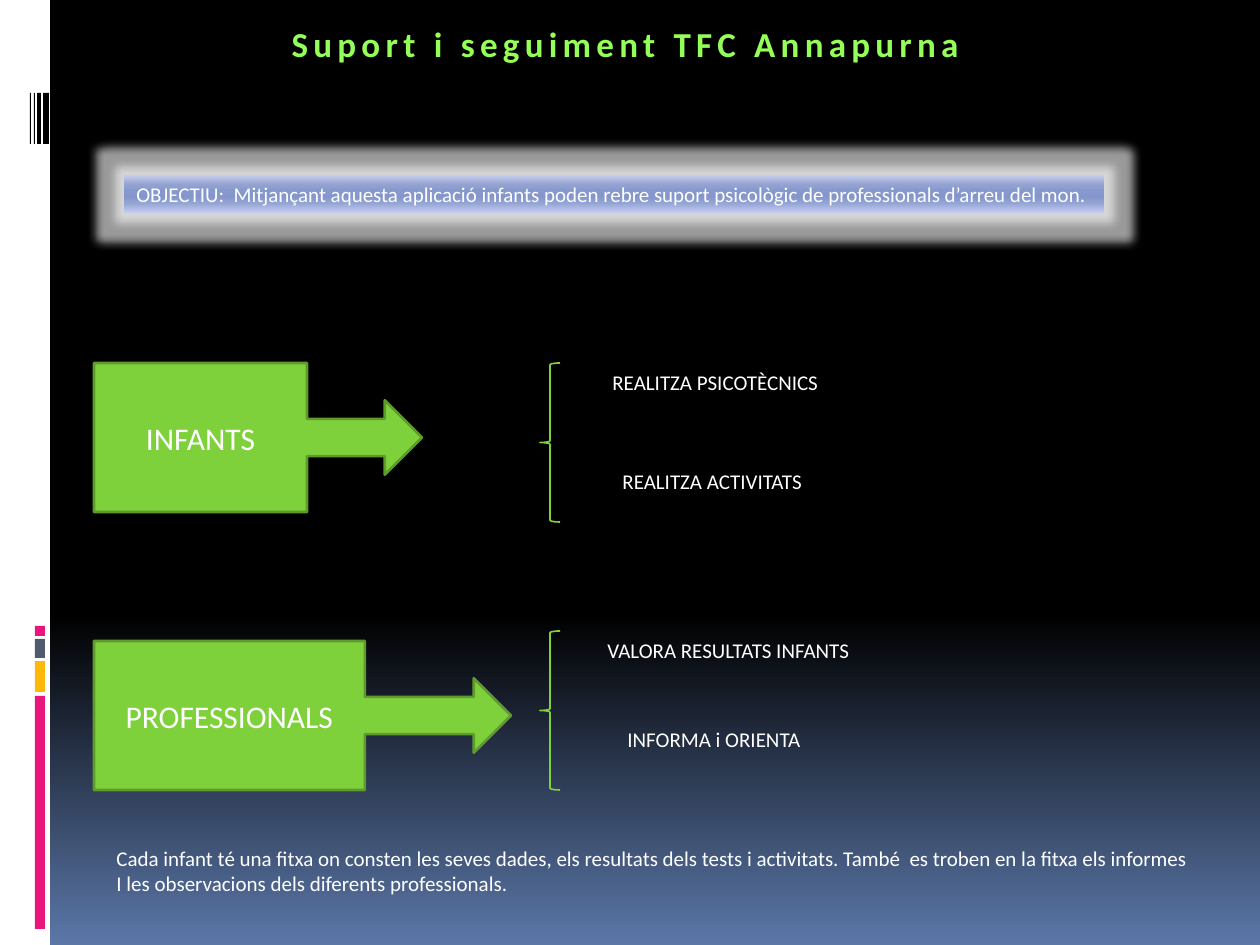
from lxml.etree import SubElement
from pptx import Presentation
from pptx.dml.color import RGBColor
from pptx.enum.shapes import MSO_SHAPE as Preset
from pptx.enum.text import MSO_ANCHOR as Anchor, MSO_AUTO_SIZE as AutoSize, PP_ALIGN as Align
from pptx.oxml import parse_xml
from pptx.oxml.ns import nsdecls, qn
from pptx.util import Pt

SLIDE_W, SLIDE_H = 1260, 945
PX_PER_INCH = 126
TITLE_ONLY = 5
FONT = "Calibri"

WHITE = RGBColor(0xFF, 0xFF, 0xFF)
BLACK = RGBColor(0x00, 0x00, 0x00)
DUSK = RGBColor(0x5B, 0x77, 0xA8)
PINK = RGBColor(0xEA, 0x15, 0x7A)
AMBER = RGBColor(0xFE, 0xB8, 0x0A)
SLATE = RGBColor(0x4E, 0x5B, 0x6F)
GREEN = RGBColor(0x7F, 0xD1, 0x3B)
DARK_GREEN = RGBColor(0x5E, 0x9B, 0x2C)

SKY_STOPS = [(0, BLACK), (65, BLACK), (100, DUSK)]
TITLE_STOPS = [(10, RGBColor(0x94, 0xFF, 0x59)), (75, RGBColor(0x5B, 0xB6, 0x10))]
BANNER_STOPS = [
    (0, RGBColor(0xC7, 0xCF, 0xEC)), (25, RGBColor(0x94, 0xA3, 0xD1)),
    (40, RGBColor(0x86, 0x98, 0xCD)), (50, RGBColor(0x84, 0x96, 0xCC)),
    (60, RGBColor(0x86, 0x98, 0xCD)), (75, RGBColor(0x95, 0xA5, 0xD5)),
    (100, RGBColor(0xC5, 0xCE, 0xED)),
]

TITLE_OUTLINE = '<a:ln %s w="11430"><a:solidFill><a:srgbClr val="F6FBF4"/></a:solidFill></a:ln>'
TITLE_SHADOW = (
    '<a:effectLst %s><a:outerShdw blurRad="50800" dist="38100" dir="2700000">'
    '<a:srgbClr val="5BB610"><a:alpha val="60000"/></a:srgbClr></a:outerShdw></a:effectLst>'
)
BANNER_GLOW = (
    '<a:effectLst %s><a:glow rad="139700"><a:srgbClr val="FFFFFF">'
    '<a:alpha val="60000"/></a:srgbClr></a:glow></a:effectLst>'
)


def px(length):
    return round(length * 914400 / PX_PER_INCH)


def effect(template):
    return parse_xml(template % nsdecls("a"))


def fill_downwards(fill, owner, stops):
    """Fill from top to bottom; owner is the element that holds the fill."""
    fill.gradient()
    fill.gradient_angle = 270
    stop_list = next(owner.iter(qn("a:gsLst")))
    for old_stop in list(stop_list):
        stop_list.remove(old_stop)
    for percent, color in stops:
        stop = SubElement(stop_list, qn("a:gs"), pos=str(percent * 1000))
        SubElement(stop, qn("a:srgbClr"), val=str(color))


def write(frame, text, size, align=Align.LEFT, anchor=Anchor.TOP):
    frame.text = text
    frame.word_wrap = False
    frame.vertical_anchor = anchor
    for paragraph in frame.paragraphs:
        paragraph.alignment = align
        for run in paragraph.runs:
            run.font.name = FONT
            run.font.size = Pt(size)
            run.font.color.rgb = WHITE


def add_preset(slide, preset, box, color=None, line=None, line_width=0):
    shape = slide.shapes.add_shape(preset, *map(px, box))
    shape.shadow.inherit = False
    if color is None:
        shape.fill.background()
    else:
        shape.fill.solid()
        shape.fill.fore_color.rgb = color
    if line is None:
        shape.line.fill.background()
    else:
        shape.line.color.rgb = line
        shape.line.width = Pt(line_width)
    return shape


def add_label(slide, box, text):
    label = slide.shapes.add_textbox(*map(px, box))
    write(label.text_frame, text, 12)


def add_sidebar(slide, box):
    left, top, width, height = box
    add_preset(slide, Preset.RECTANGLE, box, WHITE)
    for x, bar_width in ((43, 6), (37, 4), (34, 1), (30, 1)):
        add_preset(slide, Preset.RECTANGLE, (left + x, top + 93, bar_width, 51), BLACK)
    for y, bar_height, color in ((696, 233, PINK), (661, 31, AMBER), (639, 19, SLATE), (626, 10, PINK)):
        add_preset(slide, Preset.RECTANGLE, (left + 35, top + y, 10, bar_height), color)


def add_title(slide, box):
    title = slide.shapes.title
    title.left, title.top, title.width, title.height = map(px, box)
    write(title.text_frame, "Suport i seguiment TFC Annapurna", 20, Align.CENTER)
    title.text_frame.auto_size = AutoSize.SHAPE_TO_FIT_TEXT
    run = title.text_frame.paragraphs[0].runs[0]
    run.font.bold = True
    properties = run.font._element
    properties.set("spc", "300")
    fill_downwards(run.font.fill, properties, TITLE_STOPS)
    properties.insert(0, effect(TITLE_OUTLINE))
    properties.find(qn("a:gradFill")).addnext(effect(TITLE_SHADOW))


def add_objective(slide, box):
    banner = add_preset(slide, Preset.RECTANGLE, box)
    fill_downwards(banner.fill, banner._element, BANNER_STOPS)
    properties = banner._element.spPr
    properties.replace(properties.find(qn("a:effectLst")), effect(BANNER_GLOW))
    write(banner.text_frame,
          "OBJECTIU:  Mitjançant aquesta aplicació infants poden rebre suport "
          "psicològic de professionals d’arreu del mon.", 12)


def add_role(slide, box, role, callout_width, brace_y, tasks):
    """Arrow callout, brace and tasks; each task is (x, y, width, text)."""
    left, top, _, height = box
    callout = add_preset(slide, Preset.RIGHT_ARROW_CALLOUT,
                         (left, top, callout_width, height), GREEN, DARK_GREEN, 1.5)
    write(callout.text_frame, role, 18, Align.CENTER, Anchor.MIDDLE)
    add_preset(slide, Preset.LEFT_BRACE, (left + 446, top + brace_y, 20, 159),
               line=GREEN, line_width=0.94)
    for x, y, width, task in tasks:
        add_label(slide, (left + x, top + y, width, 38), task)


def main():
    deck = Presentation()
    deck.slide_width, deck.slide_height = px(SLIDE_W), px(SLIDE_H)
    slide = deck.slides.add_slide(deck.slide_layouts[TITLE_ONLY])
    fill_downwards(slide.background.fill, slide._element, SKY_STOPS)

    add_sidebar(slide, (0, 0, 50, SLIDE_H))
    add_title(slide, (273, 16, 705, 55))
    add_objective(slide, (124, 175, 980, 38))
    add_role(slide, (94, 363, 780, 149), "INFANTS", 328, 0,
             [(506, 0, 233, "REALITZA PSICOTÈCNICS"),
              (516, 99, 207, "REALITZA ACTIVITATS")])
    add_role(slide, (94, 641, 780, 149), "PROFESSIONALS", 417, -10,
             [(501, -10, 270, "VALORA RESULTATS INFANTS"),
              (521, 79, 200, "INFORMA i ORIENTA")])
    add_label(slide, (104, 839, 1118, 63),
              "Cada infant té una fitxa on consten les seves dades, els resultats dels "
              "tests i activitats. També  es troben en la fitxa els informes\n"
              "I les observacions dels diferents professionals.")
    deck.save("out.pptx")


if __name__ == "__main__":
    main()
